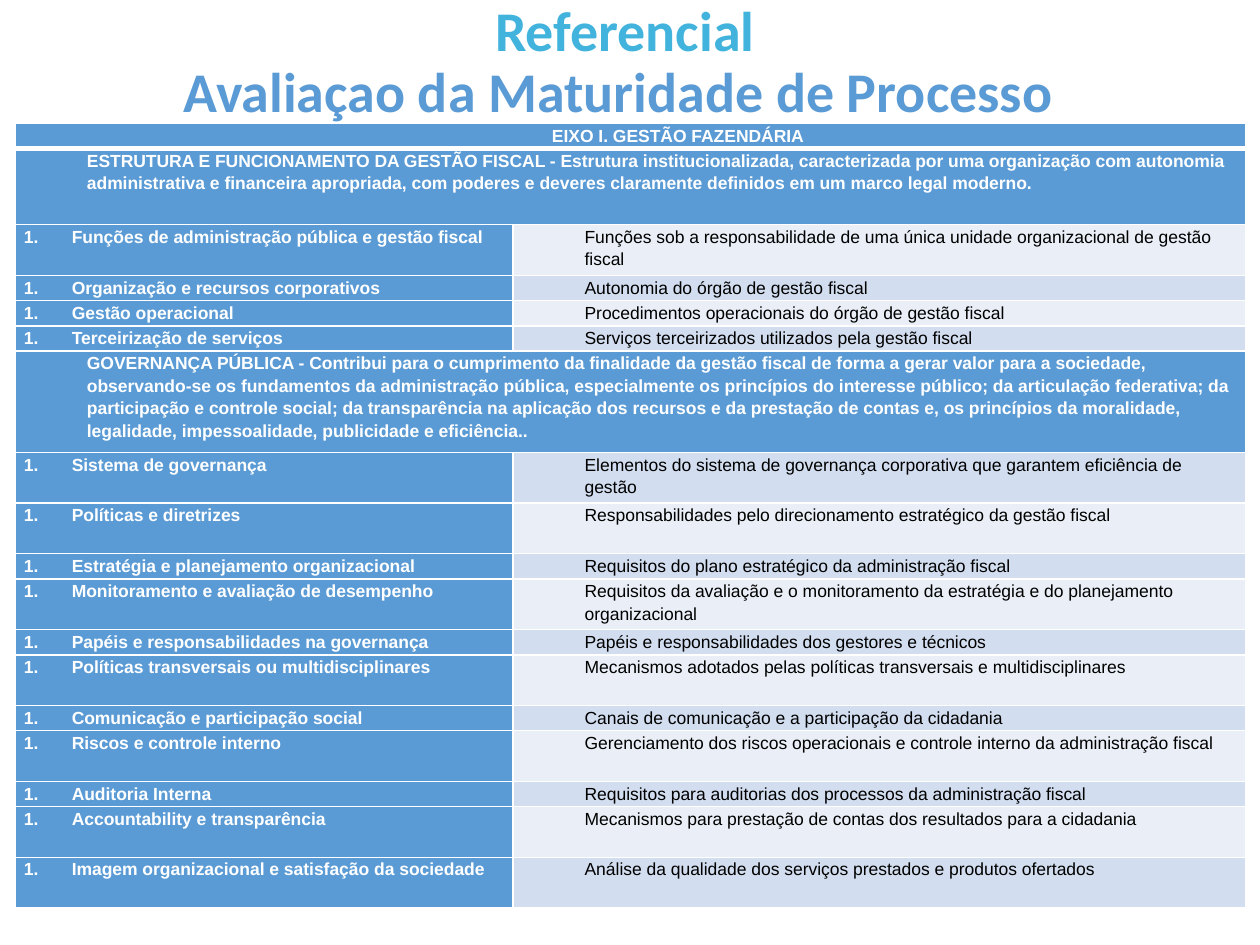
from lxml.etree import SubElement
from pptx import Presentation
from pptx.dml.color import RGBColor
from pptx.enum.text import MSO_AUTO_SIZE as AutoSize, MSO_ANCHOR as Anchor, PP_ALIGN as Align
from pptx.oxml import parse_xml
from pptx.oxml.ns import nsdecls, qn
from pptx.util import Inches, Pt

CYAN = RGBColor(0x41, 0xB3, 0xDC)
BLUE = RGBColor(0x5B, 0x9B, 0xD5)
WHITE = RGBColor(0xFF, 0xFF, 0xFF)
BLACK = RGBColor(0, 0, 0)
BANDS = (RGBColor(0xEA, 0xEF, 0xF7), RGBColor(0xD2, 0xDE, 0xEF))

TITLE = [("Referencial", CYAN), ("Avaliaçao da Maturidade de Processo ", BLUE)]
AXIS = "EIXO I. GESTÃO FAZENDÁRIA"
SECTIONS = [
    (3, "ESTRUTURA E FUNCIONAMENTO DA GESTÃO FISCAL - Estrutura institucionalizada, "
        "caracterizada por uma organização com autonomia administrativa e financeira "
        "apropriada, com poderes e deveres claramente definidos em um marco legal moderno.", [
        (2, "Funções de administração pública e gestão fiscal",
         "Funções sob a responsabilidade de uma única unidade organizacional de gestão fiscal"),
        (1, "Organização e recursos corporativos", "Autonomia do órgão de gestão fiscal"),
        (1, "Gestão operacional", "Procedimentos operacionais do órgão de gestão fiscal"),
        (1, "Terceirização de serviços", "Serviços terceirizados utilizados pela gestão fiscal"),
    ]),
    (4, "GOVERNANÇA PÚBLICA - Contribui para o cumprimento da finalidade da gestão fiscal "
        "de forma a gerar valor para a sociedade, observando-se os fundamentos da "
        "administração pública, especialmente os princípios do interesse público; da "
        "articulação federativa; da participação e controle social; da transparência na "
        "aplicação dos recursos e da prestação de contas e, os princípios da moralidade, "
        "legalidade, impessoalidade, publicidade e eficiência..", [
        (2, "Sistema de governança",
         "Elementos do sistema de governança corporativa que garantem eficiência de gestão"),
        (2, "Políticas e diretrizes",
         "Responsabilidades pelo direcionamento estratégico da gestão fiscal"),
        (1, "Estratégia e planejamento organizacional",
         "Requisitos do plano estratégico da administração fiscal"),
        (2, "Monitoramento e avaliação de desempenho",
         "Requisitos da avaliação e o monitoramento da estratégia e do planejamento organizacional"),
        (1, "Papéis e responsabilidades na governança",
         "Papéis e responsabilidades dos gestores e técnicos"),
        (2, "Políticas transversais ou multidisciplinares",
         "Mecanismos adotados pelas políticas transversais e multidisciplinares"),
        (1, "Comunicação e participação social",
         "Canais de comunicação e a participação da cidadania"),
        (2, "Riscos e controle interno",
         "Gerenciamento dos riscos operacionais e controle interno da administração fiscal"),
        (1, "Auditoria Interna",
         "Requisitos para auditorias dos processos da administração fiscal"),
        (2, "Accountability e transparência",
         "Mecanismos para prestação de contas dos resultados para a cidadania"),
        (2, "Imagem organizacional e satisfação da sociedade",
         "Análise da qualidade dos serviços prestados e produtos ofertados"),
    ]),
]
COLUMN_WIDTHS = (3.95, 5.82)
TABLE_HEIGHT = 6.23


def set_borders(cell, row):
    widths = {"L": 1, "R": 1, "T": 3 if row == 1 else 1, "B": 3 if row == 0 else 1}
    properties = cell._tc.get_or_add_tcPr()
    for position, (side, width) in enumerate(widths.items()):
        properties.insert(position, parse_xml(
            f'<a:ln{side} {nsdecls("a")} w="{Pt(width)}"><a:solidFill>'
            f'<a:srgbClr val="{WHITE}"/></a:solidFill></a:ln{side}>'))


def fill_cell(cell, row, text, fill=BLUE, color=WHITE, bold=True,
              indent=0.5, numbered=False, align=Align.LEFT):
    cell.margin_left = cell.margin_right = Inches(0.07)
    cell.margin_top = cell.margin_bottom = 0
    cell.fill.solid()
    cell.fill.fore_color.rgb = fill
    set_borders(cell, row)
    para = cell.text_frame.paragraphs[0]
    para.text = text
    para.alignment = align
    para.line_spacing = 1.15
    layout = para._p.get_or_add_pPr()
    layout.set("marL", str(Inches(indent)))
    layout.set("indent", str(Inches(-indent if numbered else 0)))
    if numbered:
        SubElement(layout, qn("a:buAutoNum"), type="arabicPeriod")
    font = para.font
    font.name, font.size, font.bold = "Arial", Pt(10), bold
    font.color.rgb = color


def add_title(page):
    title = page.shapes.title
    title.left, title.top, title.width, title.height = map(Inches, (0.65, 0.05, 8.62, 0.91))
    frame = title.text_frame
    frame.auto_size = AutoSize.NONE
    frame.vertical_anchor = Anchor.MIDDLE
    para = frame.paragraphs[0]
    para.alignment = Align.CENTER
    para.line_spacing = 0.9
    para.font.name, para.font.size, para.font.bold = "Calibri", Pt(32), True
    for number, (text, color) in enumerate(TITLE):
        if number:
            para.add_line_break()
        span = para.add_run()
        span.text = text
        span.font.color.rgb = color


def add_maturity_table(page):
    rows = [(1, AXIS, None)]
    for lines, heading, topics in SECTIONS:
        rows += [(lines, heading, None), *topics]
    line_height = TABLE_HEIGHT / sum(lines for lines, *_ in rows)
    table = page.shapes.add_table(
        len(rows), 2, Inches(0.12), Inches(0.98),
        Inches(sum(COLUMN_WIDTHS)), Inches(TABLE_HEIGHT)).table
    for column, width in zip(table.columns, COLUMN_WIDTHS):
        column.width = Inches(width)
    for row, (lines, topic, description) in enumerate(rows):
        table.rows[row].height = Inches(lines * line_height)
        left, right = table.cell(row, 0), table.cell(row, 1)
        if description:
            fill_cell(left, row, topic, indent=0.38, numbered=True)
            fill_cell(right, row, description, BANDS[row % 2], BLACK, bold=False)
            continue
        left.merge(right)
        set_borders(right, row)
        if row == 0:
            fill_cell(left, row, topic, indent=0.75, align=Align.CENTER)
        else:
            fill_cell(left, row, topic)


def main():
    deck = Presentation()
    deck.slide_width, deck.slide_height = Inches(10), Inches(7.5)
    page = deck.slides.add_slide(deck.slide_layouts[5])
    add_title(page)
    add_maturity_table(page)
    deck.save("out.pptx")


if __name__ == "__main__":
    main()
